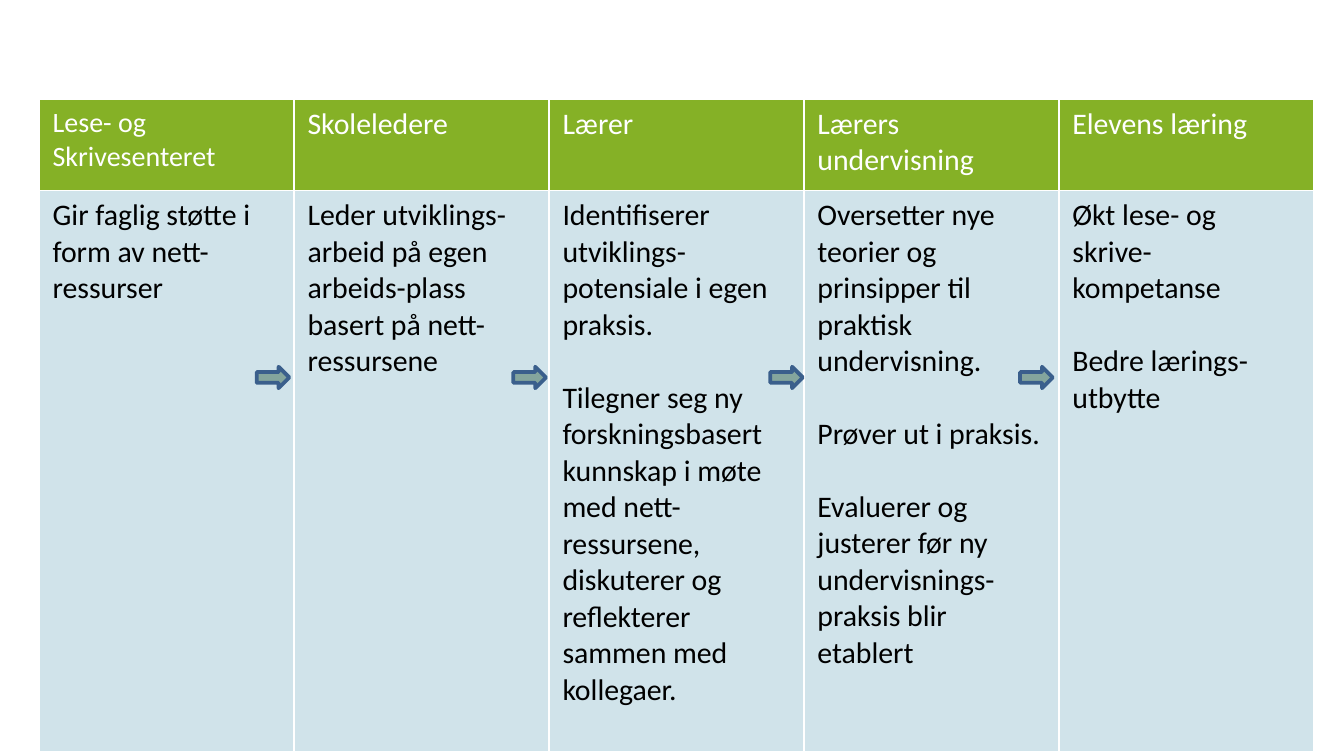
from lxml.etree import SubElement
from pptx import Presentation
from pptx.dml.color import RGBColor
from pptx.enum.shapes import MSO_SHAPE
from pptx.oxml.ns import qn
from pptx.util import Pt

WHITE = RGBColor(0xFF, 0xFF, 0xFF)
BLACK = RGBColor(0x00, 0x00, 0x00)
GREEN = RGBColor(0x85, 0xB1, 0x26)
PALE_BLUE = RGBColor(0xD0, 0xE3, 0xEA)
ARROW_FILL = RGBColor(0x84, 0xA5, 0x9D)
ARROW_LINE = RGBColor(0x3A, 0x5F, 0x8C)

COLUMN_WIDTH = 136.6
HEADER_HEIGHT = 49
BODY_HEIGHT = 301
ARROW_LEFTS = [137.5, 275, 412.6, 546.5]

HEADERS = [
    ("Lese- og Skrivesenteret", 15),
    ("Skoleledere", 16),
    ("Lærer", 16),
    ("Lærers undervisning", 16),
    ("Elevens læring", 16),
]

BODIES = [
    [["Gir faglig støtte i form av nett-ressurser"]],
    [["Leder utviklings-arbeid på egen arbeids-plass", "basert på nett-ressursene"]],
    [
        ["Identifiserer utviklings-potensiale i egen praksis."],
        ["Tilegner seg ny forskningsbasert kunnskap i møte med nett-ressursene, "
         "diskuterer og reflekterer sammen med kollegaer."],
    ],
    [
        ["Oversetter nye teorier og prinsipper til praktisk undervisning."],
        ["Prøver ut i praksis."],
        ["Evaluerer og justerer før ny undervisnings-praksis blir etablert"],
    ],
    [["Økt lese- og skrive-", "kompetanse"], ["Bedre lærings-utbytte"]],
]


class SlideBuilder:
    font_name = "Calibri"
    group_gap = 19.5
    border_width = 1

    def __init__(self, slide):
        self.slide = slide

    def add_table(self, left, top, column_widths, row_heights):
        frame = self.slide.shapes.add_table(
            len(row_heights), len(column_widths), Pt(left), Pt(top),
            Pt(sum(column_widths)), Pt(sum(row_heights)))
        table = frame.table
        for column, width in zip(table.columns, column_widths):
            column.width = Pt(width)
        for row, height in zip(table.rows, row_heights):
            row.height = Pt(height)
        return table

    def add_borders(self, cell):
        properties = cell._tc.get_or_add_tcPr()
        for side in ("a:lnL", "a:lnR", "a:lnT", "a:lnB"):
            line = SubElement(properties, qn(side), w=str(Pt(self.border_width)))
            fill = SubElement(line, qn("a:solidFill"))
            SubElement(fill, qn("a:srgbClr"), val=str(WHITE))

    def fill_cell(self, cell, groups, size, text_color, fill_color):
        self.add_borders(cell)
        cell.fill.solid()
        cell.fill.fore_color.rgb = fill_color
        paragraph = cell.text_frame.paragraphs[0]
        for group_index, group in enumerate(groups):
            for line_index, text in enumerate(group):
                if group_index or line_index:
                    paragraph = cell.text_frame.add_paragraph()
                if group_index and not line_index:
                    paragraph.space_before = Pt(self.group_gap)
                run = paragraph.add_run()
                run.text = text
                run.font.name = self.font_name
                run.font.size = Pt(size)
                run.font.bold = False
                run.font.color.rgb = text_color

    def add_arrow(self, left, top, width, height):
        shape = self.slide.shapes.add_shape(
            MSO_SHAPE.RIGHT_ARROW, Pt(left), Pt(top), Pt(width), Pt(height))
        shape.shadow.inherit = False
        shape.fill.solid()
        shape.fill.fore_color.rgb = ARROW_FILL
        shape.line.color.rgb = ARROW_LINE
        shape.line.width = Pt(2)


def main():
    presentation = Presentation()
    presentation.slide_width = Pt(720)
    presentation.slide_height = Pt(405)
    slide = presentation.slides.add_slide(presentation.slide_layouts[6])
    builder = SlideBuilder(slide)

    table = builder.add_table(
        21, 53, [COLUMN_WIDTH] * len(HEADERS), [HEADER_HEIGHT, BODY_HEIGHT])
    for column, ((title, size), groups) in enumerate(zip(HEADERS, BODIES)):
        builder.fill_cell(table.cell(0, column), [[title]], size, WHITE, GREEN)
        builder.fill_cell(table.cell(1, column), groups, 16, BLACK, PALE_BLUE)

    for left in ARROW_LEFTS:
        builder.add_arrow(left, 196.5, 17.5, 11.5)

    presentation.save("out.pptx")


if __name__ == "__main__":
    main()
